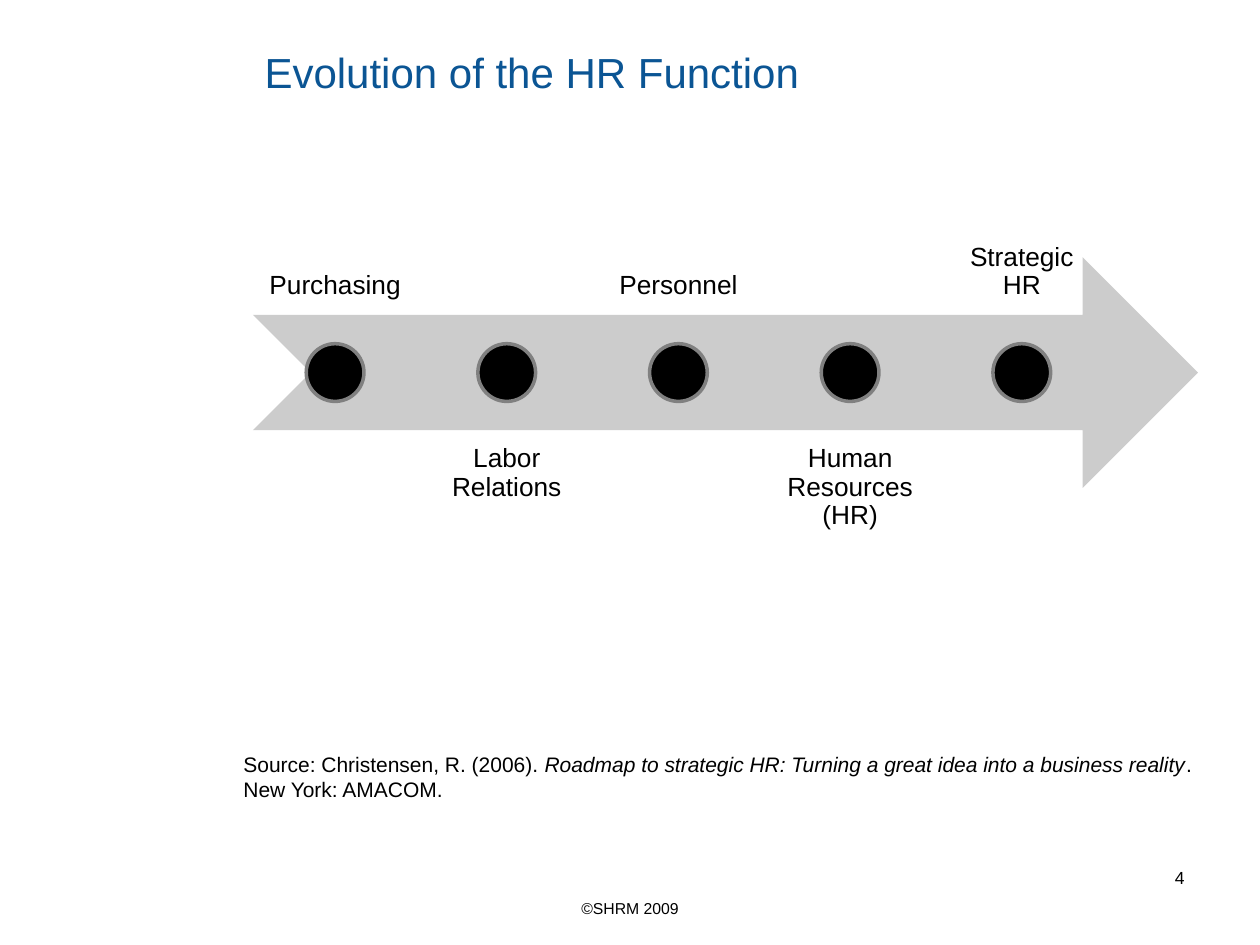
from pptx import Presentation
from pptx.dml.color import RGBColor
from pptx.enum.shapes import MSO_SHAPE
from pptx.enum.text import MSO_ANCHOR, MSO_AUTO_SIZE, PP_ALIGN
from pptx.util import Pt

STAGES = ["Purchasing", "Labor Relations", "Personnel", "Human Resources (HR)", "Strategic HR"]
FIRST_CENTER = 191.5
STAGE_STEP = 98.1
LABEL_WIDTH = 93.6
LABEL_HEIGHT = 131.8
LABEL_INSET = 8.4
ARROW_TOP = 147
MARKER_SIZE = 33


def color(hex_string):
    return RGBColor.from_string(hex_string)


def place(shape, left, top, width, height):
    shape.left, shape.top = Pt(left), Pt(top)
    shape.width, shape.height = Pt(width), Pt(height)


def format_text(shape, size, font_color="000000", alignment=PP_ALIGN.LEFT, anchor=MSO_ANCHOR.TOP):
    text_frame = shape.text_frame
    text_frame.word_wrap = True
    text_frame.auto_size = MSO_AUTO_SIZE.NONE
    text_frame.vertical_anchor = anchor
    for paragraph in text_frame.paragraphs:
        paragraph.alignment = alignment
        for run in paragraph.runs:
            run.font.name = "Arial"
            run.font.size = Pt(size)
            run.font.color.rgb = color(font_color)


def add_title(slide, text):
    title = slide.shapes.title
    place(title, 144, 21.6, 540, 38.2)
    title.text_frame.text = text
    format_text(title, 24, "0B5594", anchor=MSO_ANCHOR.MIDDLE)


def add_text(shapes, text, box, size, **formatting):
    text_box = shapes.add_textbox(*map(Pt, box))
    text_box.text_frame.text = text
    format_text(text_box, size, **formatting)
    return text_box


def add_filled_shape(shapes, kind, box, fill_color, line_color=None):
    shape = shapes.add_shape(kind, *map(Pt, box))
    shape.shadow.inherit = False
    shape.fill.solid()
    shape.fill.fore_color.rgb = color(fill_color)
    if line_color:
        shape.line.color.rgb = color(line_color)
        shape.line.width = Pt(2)
    else:
        shape.line.fill.background()


def add_stage(shapes, index, name):
    center = FIRST_CENTER + index * STAGE_STEP
    above = index % 2 == 0
    label_top = ARROW_TOP - 98.8 if above else ARROW_TOP + 99
    label = add_text(
        shapes, name, (center - LABEL_WIDTH / 2, label_top, LABEL_WIDTH, LABEL_HEIGHT), 15,
        alignment=PP_ALIGN.CENTER, anchor=MSO_ANCHOR.BOTTOM if above else MSO_ANCHOR.TOP,
    )
    text_frame = label.text_frame
    text_frame.margin_left = text_frame.margin_right = Pt(LABEL_INSET)
    text_frame.margin_top = text_frame.margin_bottom = Pt(LABEL_INSET)
    text_frame.paragraphs[0].line_spacing = 0.9
    marker_top = ARROW_TOP + (LABEL_HEIGHT - MARKER_SIZE) / 2
    marker_box = (center - MARKER_SIZE / 2, marker_top, MARKER_SIZE, MARKER_SIZE)
    add_filled_shape(shapes, MSO_SHAPE.OVAL, marker_box, "000000", "808080")


def add_timeline(slide):
    shapes = slide.shapes.add_group_shape().shapes
    arrow_box = (144.6, ARROW_TOP, 540, LABEL_HEIGHT)
    add_filled_shape(shapes, MSO_SHAPE.NOTCHED_RIGHT_ARROW, arrow_box, "CCCCCC")
    for index, name in enumerate(STAGES):
        add_stage(shapes, index, name)


def add_source(slide):
    source = add_text(slide.shapes, "Source: Christensen, R. (2006). ", (132, 426, 564, 36), 12)
    paragraph = source.text_frame.paragraphs[0]
    book = paragraph.add_run()
    book.text = "Roadmap to strategic HR: Turning a great idea into a business reality"
    paragraph.add_run().text = ". New York: AMACOM."
    format_text(source, 12)
    book.font.italic = True


def main():
    presentation = Presentation()
    presentation.slide_width, presentation.slide_height = Pt(720), Pt(540)
    slide = presentation.slides.add_slide(presentation.slide_layouts[5])
    add_title(slide, "Evolution of the HR Function")
    add_text(slide.shapes, "©SHRM 2009", (246, 510, 228, 19.2), 9, alignment=PP_ALIGN.CENTER)
    add_text(slide.shapes, "4", (516, 492, 168, 37.5), 10, alignment=PP_ALIGN.RIGHT)
    add_timeline(slide)
    add_source(slide)
    presentation.save("out.pptx")


if __name__ == "__main__":
    main()
